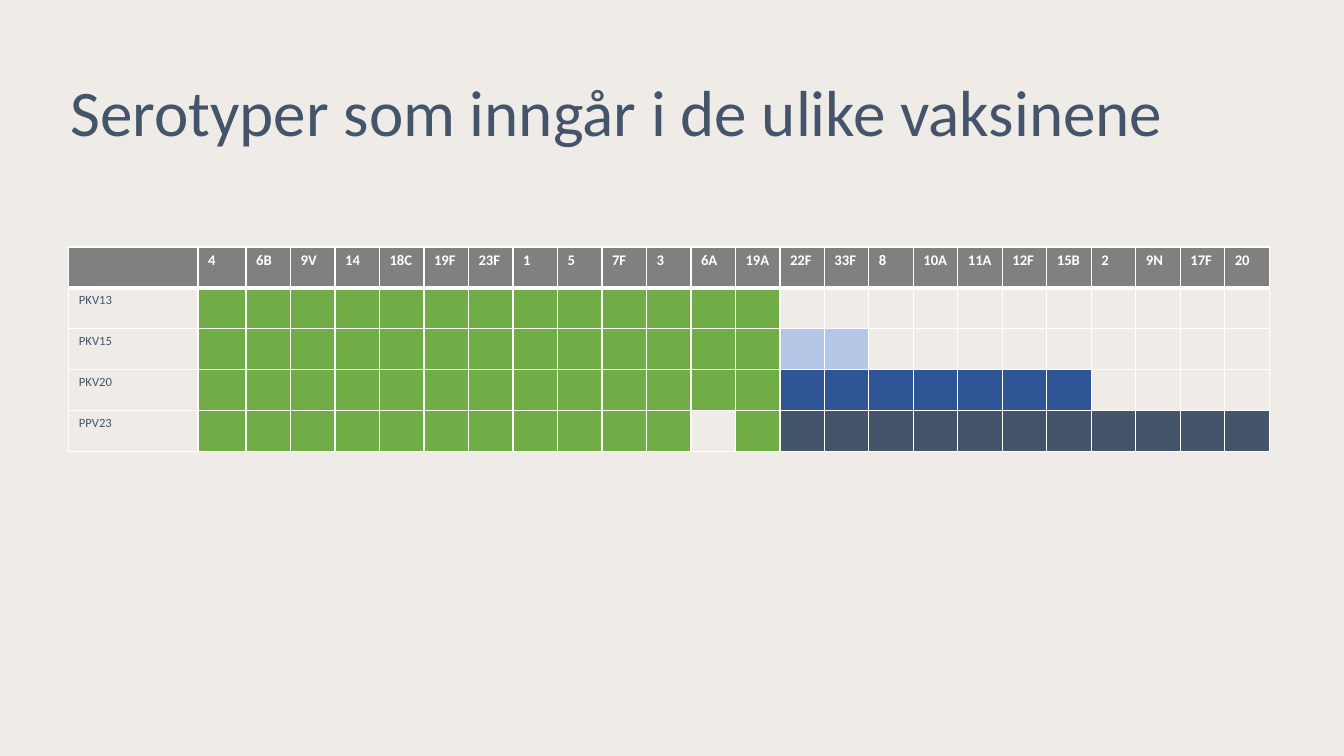
import pptx
import pptx.util
import pptx.dml.color
import pptx.enum.text
from lxml import etree
from pptx.oxml.ns import qn

Pt = pptx.util.Pt

GREY, GREEN, WHITE = "808080", "70AD47", "FFFFFF"
LIGHT_BLUE, BLUE, SLATE = "B4C7E7", "2F5597", "44546A"

SEROTYPES = ("4 6B 9V 14 18C 19F 23F 1 5 7F 3 6A 19A 22F 33F 8 "
             "10A 11A 12F 15B 2 9N 17F 20").split()
SHARED = SEROTYPES[:13]

# Vaccine: serotypes shared with PKV13, further serotypes, their colour
VACCINES = {
    "PKV13": (SHARED, [], GREEN),
    "PKV15": (SHARED, SEROTYPES[13:15], LIGHT_BLUE),
    "PKV20": (SHARED, SEROTYPES[13:20], BLUE),
    "PPV23": ([name for name in SHARED if name != "6A"], SEROTYPES[13:], SLATE),
}


def colour(value):
    return pptx.dml.color.RGBColor.from_string(value)


class SlideBuilder:
    """Holds the text style and the current slide."""

    font = "Calibri"

    def __init__(self, deck, background):
        self.slide = deck.slides.add_slide(deck.slide_layouts[5])
        fill = self.slide.background.fill
        fill.solid()
        fill.fore_color.rgb = colour(background)

    def add_span(self, para, text, size, ink, bold=False):
        para.alignment = pptx.enum.text.PP_ALIGN.LEFT
        span = para.add_run()
        span.text = text
        span.font.name = self.font
        span.font.size = Pt(size)
        span.font.bold = bold
        span.font.color.rgb = colour(ink)

    def title(self, text, left, top, width, height):
        box = self.slide.shapes.title
        box.left, box.top, box.width, box.height = map(Pt, (left, top, width, height))
        frame = box.text_frame
        frame.word_wrap = True
        frame.auto_size = pptx.enum.text.MSO_AUTO_SIZE.NONE
        frame.vertical_anchor = pptx.enum.text.MSO_ANCHOR.TOP
        para = frame.paragraphs[0]
        para.line_spacing = 0.9
        self.add_span(para, text, 46.5, SLATE)

    def table(self, left, top, widths, row_height, row_count):
        table = self.slide.shapes.add_table(
            row_count, len(widths), Pt(left), Pt(top),
            Pt(sum(widths)), Pt(row_height * row_count)).table
        table.first_row = table.horz_banding = False
        for column, width in zip(table.columns, widths):
            column.width = Pt(width)
        for row in table.rows:
            row.height = Pt(row_height)
        return table

    def cell(self, cell, fill=None, top=1, bottom=1):
        properties = cell._tc.get_or_add_tcPr()
        for side, weight in (("L", 1), ("R", 1), ("T", top), ("B", bottom)):
            line = etree.SubElement(properties, qn("a:ln" + side), w=str(int(Pt(weight))))
            solid = etree.SubElement(line, qn("a:solidFill"))
            etree.SubElement(solid, qn("a:srgbClr"), val=WHITE)
        if fill:
            cell.fill.solid()
            cell.fill.fore_color.rgb = colour(fill)
        else:
            cell.fill.background()


def main():
    deck = pptx.Presentation()
    deck.slide_width, deck.slide_height = Pt(960), Pt(540)
    page = SlideBuilder(deck, "EFECE8")

    # Title
    page.title("Serotyper som inngår i de ulike vaksinene", 43.2, 54, 828, 50.4)

    # Table grid
    widths = [92.2, 34.4] + [31.8] * (len(SEROTYPES) - 1)
    table = page.table(49.2, 176.4, widths, 29.2, len(VACCINES) + 1)

    # Header row
    for index, name in enumerate([""] + SEROTYPES):
        cell = table.cell(0, index)
        page.cell(cell, GREY, bottom=3)
        if name:
            page.add_span(cell.text_frame.paragraphs[0], name, 10.5, WHITE, bold=True)

    # One row per vaccine
    for row, (vaccine, (shared, further, shade)) in enumerate(VACCINES.items(), 1):
        top = 3 if row == 1 else 1
        label = table.cell(row, 0)
        page.cell(label, top=top)
        page.add_span(label.text_frame.paragraphs[0], vaccine, 9, SLATE)
        fills = {**dict.fromkeys(shared, GREEN), **dict.fromkeys(further, shade)}
        for index, name in enumerate(SEROTYPES, 1):
            page.cell(table.cell(row, index), fills.get(name), top=top)

    deck.save("out.pptx")


if __name__ == "__main__":
    main()
